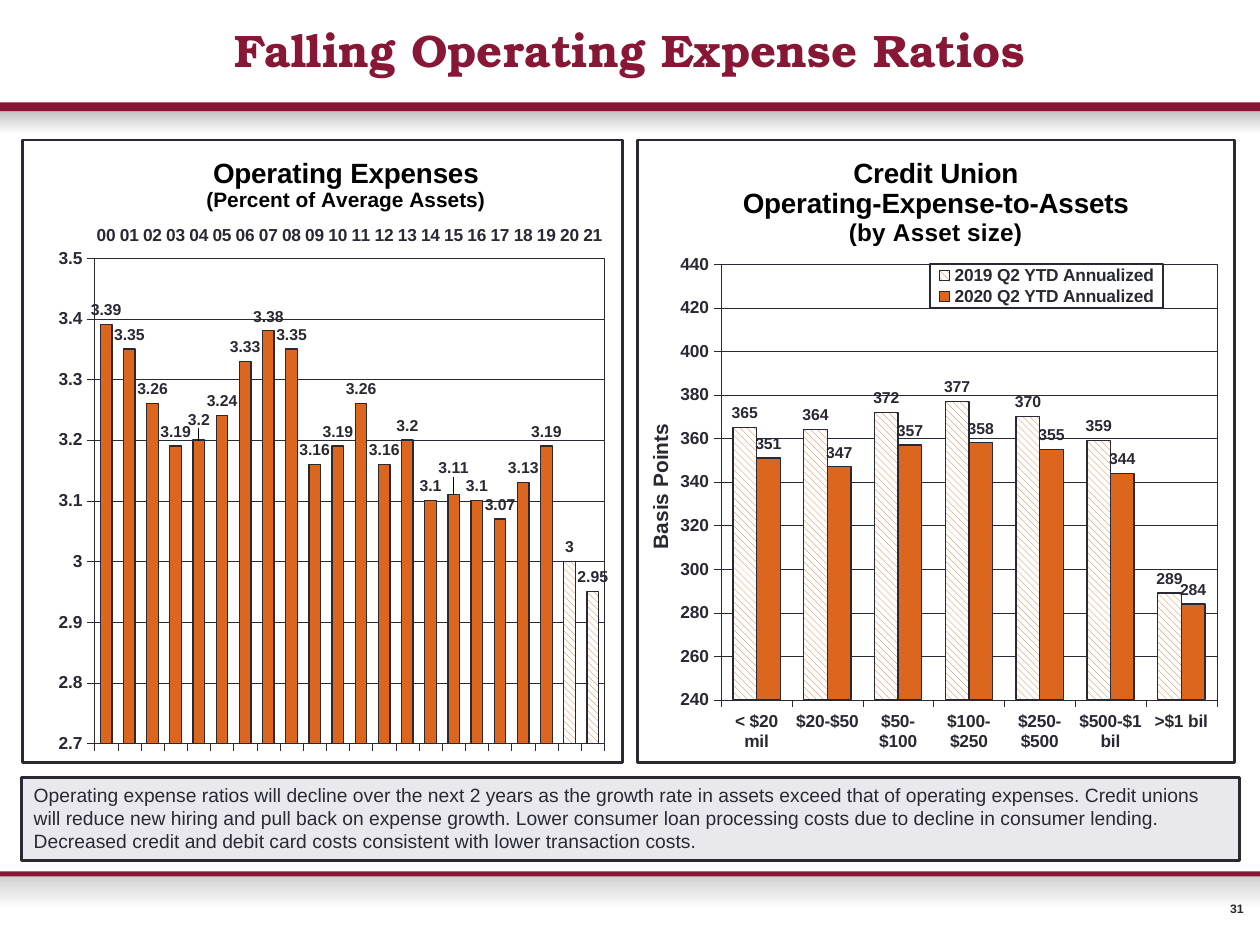
from pptx import Presentation
from pptx.chart.data import CategoryChartData
from pptx.dml.color import RGBColor
from pptx.enum.chart import XL_CHART_TYPE, XL_LABEL_POSITION, XL_LEGEND_POSITION, XL_TICK_LABEL_POSITION, XL_TICK_MARK
from pptx.enum.dml import MSO_PATTERN
from pptx.enum.shapes import MSO_SHAPE
from pptx.enum.text import MSO_ANCHOR, PP_ALIGN
from pptx.oxml import parse_xml
from pptx.oxml.ns import nsdecls
from pptx.util import Pt

COLUMNS = XL_CHART_TYPE.COLUMN_CLUSTERED
OUTSIDE_END = XL_LABEL_POSITION.OUTSIDE_END
DIAGONAL = MSO_PATTERN.WIDE_DOWNWARD_DIAGONAL
MAROON = RGBColor(0x88, 0x16, 0x35)
INK = RGBColor(0x29, 0x29, 0x34)
ORANGE = RGBColor(0xDC, 0x66, 0x1D)
PALE = RGBColor(0xE8, 0xE8, 0xED)
BLACK = RGBColor(0, 0, 0)
WHITE = RGBColor(0xFF, 0xFF, 0xFF)
GRAY = RGBColor(0xC0, 0xC0, 0xC0)
LIGHT_GRAY = RGBColor(0xCF, 0xCF, 0xCF)
SANS, SLAB = "Arial", "TeX Gyre Bonum"
SLIDE_W, SLIDE_H = 720, 540

HEADLINE = "Falling Operating Expense Ratios"
COMMENTARY = (
    "Operating expense ratios will decline over the next 2 years as the growth rate in assets "
    "exceed that of operating expenses. Credit unions will reduce new hiring and pull back on "
    "expense growth. Lower consumer loan processing costs due to decline in consumer lending. "
    "Decreased credit and debit card costs consistent with lower transaction costs.")
PAGE = "31"
SHADES = [(63, 13.7, GRAY), (500, 19.4, LIGHT_GRAY)]  # top, height, upper colour
RULES = [(58.5, 5), (498, 2.9)]  # top, height

EXPENSES = {
    "box": (12.2, 79.2, 344.2, 357.1),
    "title": [("Operating Expenses", 16), ("(Percent of Average Assets)", 12)],
    "title_at": (0.3, 0.02),
    "plot": (0.12, 0.19, 0.85, 0.78),
    "scale": (2.7, 3.5, 0.1),
    "categories": [f"{year:02}" for year in range(22)],
    "series": [("Operating Expenses", [
        3.39, 3.35, 3.26, 3.19, 3.2, 3.24, 3.33, 3.38, 3.35, 3.16, 3.19,
        3.26, 3.16, 3.2, 3.1, 3.11, 3.1, 3.07, 3.13, 3.19, 3, 2.95], False)],
}
FORECAST_YEARS = [20, 21]
RAISED_LABELS = {4: -0.01, 15: -0.02}
ASSET_SIZES = {
    "box": (363.6, 79.2, 342.7, 357.1),
    "title": [("Credit Union", 16), ("Operating-Expense-to-Assets", 16), ("(by Asset size)", 14)],
    "title_at": (0.17, 0.02),
    "plot": (0.14, 0.2, 0.83, 0.7),
    "scale": (240, 440, 20),
    "categories": ["< $20 mil", "$20-$50", "$50-$100", "$100-$250", "$250-$500", "$500-$1 bil", ">$1 bil"],
    "series": [("2019 Q2 YTD Annualized", [365, 364, 372, 377, 370, 359, 289], True),
               ("2020 Q2 YTD Annualized", [351, 347, 357, 358, 355, 344, 284], False)],
}


def style_font(font, size, color=INK, bold=True, name=SANS):
    font.size, font.bold, font.name = Pt(size), bold, name
    font.color.rgb = color


def style_line(line, width):
    line.width = Pt(width)
    line.color.rgb = INK


def add_bar(top, height):
    bar = slide.shapes.add_shape(MSO_SHAPE.RECTANGLE, 0, Pt(top), Pt(SLIDE_W), Pt(height))
    bar.shadow.inherit = False
    bar.line.fill.background()
    return bar


def add_text(text, box, size, anchor=MSO_ANCHOR.TOP, align=PP_ALIGN.LEFT, **font):
    text_box = slide.shapes.add_textbox(*map(Pt, box))
    frame = text_box.text_frame
    frame.word_wrap = True
    frame.vertical_anchor = anchor
    paragraph = frame.paragraphs[0]
    paragraph.text, paragraph.alignment = text, align
    style_font(paragraph.font, size, **font)
    return text_box


def place(element, index, values, edge=True):
    """Give a chart part a manual layout, in fractions of the chart."""
    for old in element.xpath("./c:layout"):
        element.remove(old)
    inner = '<c:layoutTarget val="inner"/>' if index == 0 else ""
    modes = '<c:xMode val="edge"/><c:yMode val="edge"/>' if edge else ""
    sizes = "".join(f'<c:{key} val="{value}"/>' for key, value in zip("xywh", values))
    element.insert(index, parse_xml(
        f'<c:layout {nsdecls("c")}><c:manualLayout>{inner}{modes}{sizes}</c:manualLayout></c:layout>'))


def hide_leader_lines(labels):
    labels.append(parse_xml(
        f'<c:extLst {nsdecls("c")}><c:ext uri="{{CE6537A1-D6FC-4f65-9D91-7224C49458BB}}" '
        'xmlns:c15="http://schemas.microsoft.com/office/drawing/2012/chart">'
        '<c15:showLeaderLines val="0"/></c:ext></c:extLst>'))


def frame_xml(width, filled=True):
    fill = f'<a:solidFill><a:srgbClr val="{WHITE}"/></a:solidFill>' if filled else "<a:noFill/>"
    return parse_xml(
        f'<c:spPr {nsdecls("c", "a")}>{fill}<a:ln w="{Pt(width)}"><a:solidFill>'
        f'<a:srgbClr val="{INK}"/></a:solidFill></a:ln></c:spPr>')


def fill_columns(fill, hatched):
    if hatched:
        fill.patterned()
        fill.pattern = DIAGONAL
        fill.fore_color.rgb, fill.back_color.rgb = ORANGE, WHITE
    else:
        fill.solid()
        fill.fore_color.rgb = ORANGE


def add_columns(panel):
    data = CategoryChartData()
    data.categories = panel["categories"]
    for name, values, _ in panel["series"]:
        data.add_series(name, values)
    chart = slide.shapes.add_chart(COLUMNS, *map(Pt, panel["box"]), data).chart
    style_font(chart.font, 7.5)
    chart.element.xpath("./c:txPr")[0].addprevious(frame_xml(1.5))
    chart.has_legend = False

    title = chart.chart_title.text_frame
    for i, (text, size) in enumerate(panel["title"]):
        paragraph = title.add_paragraph() if i else title.paragraphs[0]
        paragraph.text = text
        style_font(paragraph.font, size, BLACK)
    place(chart.chart_title.element, 1, panel["title_at"])
    plot_area = chart.element.xpath(".//c:plotArea")[0]
    place(plot_area, 0, panel["plot"])
    plot_area.append(frame_xml(0.18, filled=False))

    values_axis = chart.value_axis
    values_axis.minimum_scale, values_axis.maximum_scale, values_axis.major_unit = panel["scale"]
    style_line(values_axis.major_gridlines.format.line, 0.18)
    for axis in (values_axis, chart.category_axis):
        axis.major_tick_mark = XL_TICK_MARK.OUTSIDE
        style_font(axis.tick_labels.font, 10)
        style_line(axis.format.line, 0.18)

    plot = chart.plots[0]
    plot.gap_width, plot.overlap, plot.vary_by_categories = 100, 0, False
    for series, (_, _, hatched) in zip(plot.series, panel["series"]):
        fill_columns(series.format.fill, hatched)
        style_line(series.format.line, 0.73)
        series.data_labels.show_value = True
        series.data_labels.position = OUTSIDE_END
        style_font(series.data_labels.font, 9)
    return chart


prs = Presentation()
prs.slide_width, prs.slide_height = Pt(SLIDE_W), Pt(SLIDE_H)
slide = prs.slides.add_slide(prs.slide_layouts[6])

for top, height, shade in SHADES:
    shade_fill = add_bar(top, height).fill
    shade_fill.gradient()
    shade_fill.gradient_angle = 270
    for stop, color in zip(shade_fill.gradient_stops, (shade, WHITE)):
        stop.color.rgb = color
for top, height in RULES:
    rule_fill = add_bar(top, height).fill
    rule_fill.solid()
    rule_fill.fore_color.rgb = MAROON

add_text(HEADLINE, (12.2, 8.6, 696.2, 38.9), 26, MSO_ANCHOR.MIDDLE, PP_ALIGN.CENTER, color=MAROON, name=SLAB)
commentary = add_text(COMMENTARY, (12.2, 444.2, 696.2, 47.5), 11, bold=False)
commentary.fill.solid()
commentary.fill.fore_color.rgb = PALE
style_line(commentary.line, 1.5)
page = add_text(PAGE, (694, 515, 16.6, 8.6), 7, MSO_ANCHOR.MIDDLE, PP_ALIGN.RIGHT).text_frame
page.margin_left = page.margin_right = page.margin_top = page.margin_bottom = 0

expenses = add_columns(EXPENSES)
expenses.category_axis.tick_label_position = XL_TICK_LABEL_POSITION.HIGH
yearly = expenses.plots[0].series[0]
for year in FORECAST_YEARS:
    forecast = yearly.points[year].format
    fill_columns(forecast.fill, True)
    style_line(forecast.line, 0.73)
for year, rise in RAISED_LABELS.items():
    label = yearly.points[year].data_label
    label.position = OUTSIDE_END
    style_font(label.font, 9)
    place(expenses.element.xpath(f'.//c:dLbl[c:idx/@val="{year}"]')[0], 1, (0, rise), edge=False)
hide_leader_lines(expenses.element.xpath(".//c:ser/c:dLbls")[0])

asset_sizes = add_columns(ASSET_SIZES)
basis = asset_sizes.value_axis.axis_title
basis.text_frame.text = "Basis Points"
style_font(basis.text_frame.paragraphs[0].font, 12)
basis.element.xpath(".//a:bodyPr")[0].set("rot", "-5400000")
place(basis.element, 1, (0.01, 0.45))
asset_sizes.has_legend = True
legend = asset_sizes.legend
legend.position, legend.include_in_layout = XL_LEGEND_POSITION.RIGHT, False
style_font(legend.font, 10)
legend_xml = asset_sizes.element.xpath(".//c:legend")[0]
place(legend_xml, 1, (0.49, 0.2, 0.39, 0.07))
legend_xml.xpath("./c:txPr")[0].addprevious(frame_xml(1))

prs.save("out.pptx")
